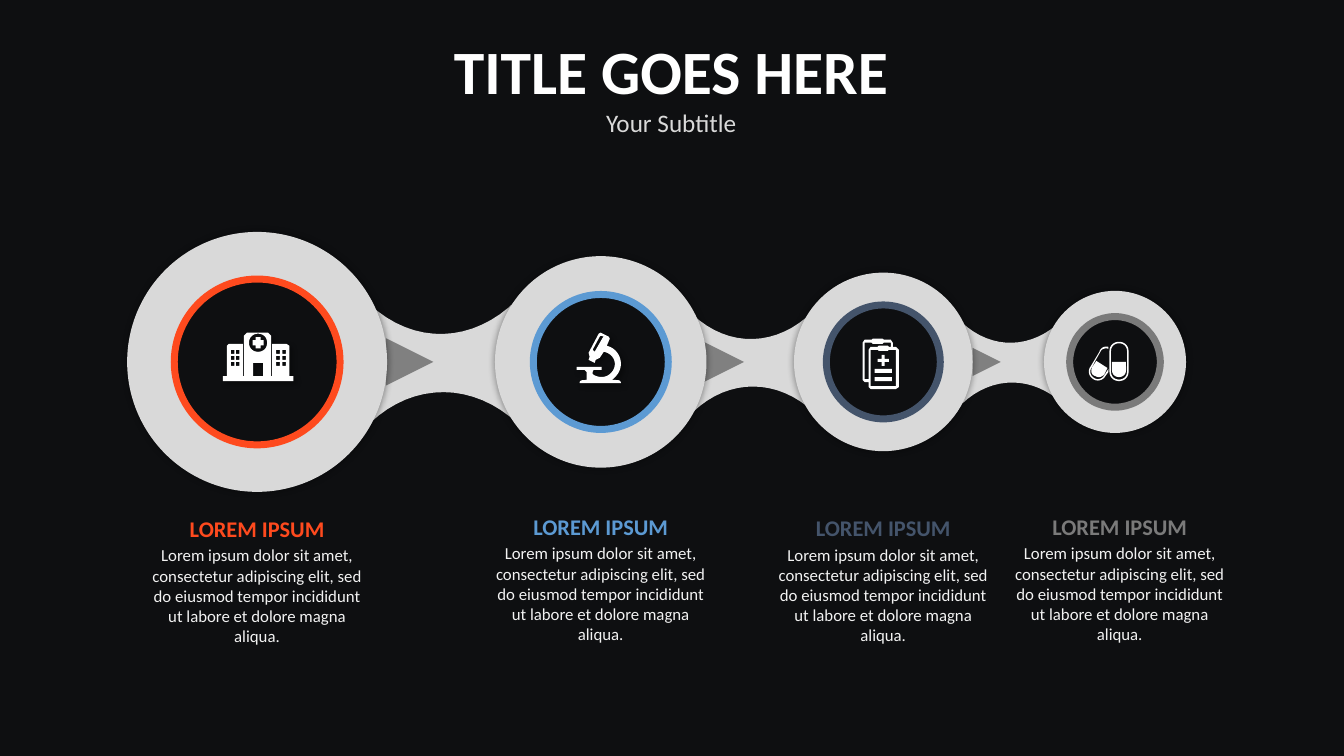
from lxml.etree import SubElement
from pptx import Presentation
from pptx.dml.color import RGBColor
from pptx.enum.shapes import MSO_SHAPE as SHAPE
from pptx.enum.text import MSO_ANCHOR as ANCHOR, MSO_AUTO_SIZE as AUTO, PP_ALIGN as ALIGN
from pptx.oxml.ns import qn
from pptx.util import Cm, Pt

COLORS = {
    "dark": "0E0F11", "disc": "D9D9D9", "arrow": "808080", "white": "FFFFFF",
    "body": "F2F2F2", "orange": "FE4A1E", "blue": "5C9AD3", "navy": "44546B",
    "gray": "7A7A7A",
}
FONT = "Calibri"
BODY = ("Lorem ipsum dolor sit amet, consectetur adipiscing elit, sed do "
        "eiusmod tempor incididunt ut labore et dolore magna aliqua.")
UNIT = Cm(2.54) // 100
RING_RATIO = 0.638
CENTER_Y = 9.12


def rgb(name):
    return RGBColor.from_string(COLORS[name])


def bezier(a, b, c, d, steps=16):
    points = []
    for i in range(steps + 1):
        t = i / steps
        u = 1 - t
        points.append(tuple(u**3 * p + 3 * u * u * t * q + 3 * u * t * t * m + t**3 * n
                            for p, q, m, n in zip(a, b, c, d)))
    return points


def box(x, y, w, h):
    return [(x, y), (x + w, y), (x + w, y + h), (x, y + h)]


def plus(x, y, a, b):
    return [(x - b, y - a), (x + b, y - a), (x + b, y - b), (x + a, y - b),
            (x + a, y + b), (x + b, y + b), (x + b, y + a), (x - b, y + a),
            (x - b, y + b), (x - a, y + b), (x - a, y - b), (x - b, y - b)]


def cap(x, y, r, bulge):
    return bezier((x - r, y), (x - r, y + bulge * 4 / 3), (x + r, y + bulge * 4 / 3), (x + r, y))


def capsule(x, top, bottom, r):
    return cap(x, top + r, r, -r) + cap(x, bottom - r, r, r)[::-1]


def hospital():
    walls = [(0, 43), (4, 43), (4, 13), (6, 11), (20, 11), (20, 43), (21, 43), (21, 3),
             (24, 0), (45, 0), (48, 3), (48, 43), (49, 43), (49, 11), (63, 11), (66, 13),
             (66, 43), (70, 43), (70, 48), (0, 48)]
    windows = [box(x, y, 3.5, 4) for x in (8, 13, 53, 59) for y in (17, 23, 29)]
    sign = capsule(35, 1, 19, 9)
    return [walls, *windows, box(30, 30, 10, 13), sign, plus(35, 10, 5.5, 2.5)]


def microscope():
    body = [(38, 47), *bezier((35, 47), (40, 43), (44, 38), (44, 31)),
            *bezier((44, 31), (44, 22), (38, 15), (30, 13)),
            (33, 6), (32, 4), (24, 0), (22, 1), (12, 20), (13, 24), (12, 27), (18, 30),
            (19, 27), (23, 25), *bezier((27, 19), (33, 20), (38, 25), (38, 31)),
            *bezier((38, 31), (38, 38), (32, 44), (25, 44)),
            *bezier((25, 44), (22, 44), (18, 43), (16, 41)),
            (16, 39), (17, 37), (25, 37), (25, 34), (0, 34), (0, 37), (8, 37), (10, 39),
            *bezier((10, 47), (6, 47), (3, 47), (3, 50)),
            *bezier((44, 50), (44, 47), (41, 47), (38, 47))]
    return [body, [(27, 4), (26, 5), (18, 19), (16, 17), (23, 4), (24, 3)]]


def clipboard():
    edge = [(0, 4), (2, 1), (9, 1), (10, 0), (20, 0), (21, 1), (28, 1), (30, 4), (30, 8),
            (33, 8), (36, 11), (36, 48), (33, 50), (8, 50), (6, 48), (6, 43), (2, 43), (0, 41)]
    back = [(6, 11), (6, 40), (2, 40), (2, 4), (9, 4), (10, 5), (20, 5), (21, 4), (28, 4),
            (28, 8), (26, 8), (25, 7), (16, 7), (15, 8), (8, 8)]
    page = [(33, 47), (8, 47), (8, 11), (15, 11), (16, 12), (25, 12), (26, 11), (33, 11)]
    return [edge, back, page, box(12, 30, 17, 4), box(12, 38, 17, 4), plus(20.5, 21.5, 5.5, 1.5)]


def pills():
    tilted = [(3, 25), *bezier((12, 10), (13, 6), (17, 4), (21, 5)),
              *bezier((21, 7), (18, 6), (14, 7), (13, 10)),
              *bezier((4, 26), (2, 29), (3, 34), (7, 36)),
              *bezier((7, 36), (10, 38), (15, 37), (17, 33)), (21, 27), (21, 30),
              *bezier((18, 34), (16, 38), (10, 40), (6, 37)),
              *bezier((6, 37), (2, 35), (0, 29), (3, 25))]
    tilted_half = [(20, 26), *bezier((17, 32), (15, 35), (11, 36), (8, 34)),
                   *bezier((8, 34), (4, 33), (3, 29), (5, 25)), (9, 19)]
    return [tilted, tilted_half, capsule(31.5, 0, 39, 9.5), capsule(31.5, 1.5, 37.5, 8),
            cap(31.5, 20, 7, 0)[::15] + cap(31.5, 28, 7, 7)[::-1]]


def paint(sp, fill, line=None, blur=0, dist=0, angle=0):
    sp.fill.solid()
    sp.fill.fore_color.rgb = rgb(fill)
    if line:
        sp.line.color.rgb = rgb(line)
        sp.line.width = Pt(5)
    else:
        sp.line.fill.background()
    sp.shadow.inherit = False
    if blur:
        effects = sp._element.spPr.find(qn("a:effectLst"))
        shadow = SubElement(effects, qn("a:outerShdw"), blurRad=str(Pt(blur)),
                            dist=str(Pt(dist)), dir=str(angle * 60000), rotWithShape="0")
        color = SubElement(shadow, qn("a:srgbClr"), val="000000")
        SubElement(color, qn("a:alpha"), val="40000")


def add_outline(s, contours, left, top, sx, sy):
    placed = [[(left + x * sx, top + y * sy) for x, y in c] for c in contours]
    builder = s.shapes.build_freeform(*placed[0][0])
    for i, points in enumerate(placed):
        if i:
            builder.move_to(*points[0])
        builder.add_line_segments(points[1:], close=True)
    return builder.convert_to_shape()


def add_link(s, left, width, arrow_left, arrow_size):
    height = width * 0.83
    neck = (bezier((0, 0.03), (0.3, 0.37), (0.7, 0.35), (0.99, 0))
            + bezier((1, 1), (0.7, 0.66), (0.3, 0.66), (0.01, 0.99)))
    sp = add_outline(s, [neck], Cm(left), Cm(CENTER_Y - height / 2), Cm(width), Cm(height))
    paint(sp, "disc")
    arrow = s.shapes.add_shape(SHAPE.ISOSCELES_TRIANGLE, Cm(arrow_left),
                               Cm(CENTER_Y - arrow_size / 2), Cm(arrow_size), Cm(arrow_size))
    arrow.rotation = 90
    paint(arrow, "arrow")


def add_circle(s, x, size, fill, line=None, blur=0):
    sp = s.shapes.add_shape(SHAPE.OVAL, Cm(x - size / 2), Cm(CENTER_Y - size / 2),
                            Cm(size), Cm(size))
    paint(sp, fill, line, blur)


def add_run(p, text, size, color, bold=False):
    p.alignment = ALIGN.CENTER
    r = p.add_run()
    r.text = text
    r.font.name, r.font.size, r.font.bold = FONT, Pt(size), bold
    r.font.color.rgb = rgb(color)


def add_stage(s, x, size, color, icon, dx, dy, label_x, label_top, blur):
    add_circle(s, x, size, "disc", blur=5)
    add_circle(s, x, size * RING_RATIO, "dark", line=color)
    sp = add_outline(s, icon(), Cm(x) + dx * UNIT, Cm(CENTER_Y) + dy * UNIT, UNIT, UNIT)
    paint(sp, "white", blur=blur, dist=3, angle=45)
    tf = s.shapes.add_textbox(Cm(label_x - 2.92), Cm(label_top), Cm(5.84), Cm(3.61)).text_frame
    tf.word_wrap = True
    add_run(tf.paragraphs[0], "LOREM IPSUM", 16, color, True)
    p = tf.add_paragraph()
    p.space_before = Pt(2.4)
    add_run(p, BODY, 12, "body")


def add_title(s, left, top, width, height):
    sp = s.shapes.title
    sp.left, sp.top, sp.width, sp.height = Cm(left), Cm(top), Cm(width), Cm(height)
    tf = sp.text_frame
    tf.word_wrap = True
    tf.auto_size = AUTO.NONE
    tf.vertical_anchor = ANCHOR.TOP
    add_run(tf.paragraphs[0], "TITLE GOES HERE", 44, "white", True)
    add_run(tf.add_paragraph(), "Your Subtitle", 18, "disc")


def main():
    prs = Presentation()
    prs.slide_width, prs.slide_height = Cm(33.87), Cm(19.05)
    s = prs.slides.add_slide(prs.slide_layouts[5])
    s.background.fill.solid()
    s.background.fill.fore_color.rgb = rgb("dark")
    add_title(s, 9.27, 0.71, 15.29, 3.05)
    for link in ((24.23, 2.57, 24.51, 0.71), (17.45, 3.07, 17.73, 1.02),
                 (9.3, 3.76, 9.73, 1.19)):
        add_link(s, *link)
    for stage in ((6.48, 6.55, "orange", hospital, -34, -29, 6.48, 12.85, 4),
                  (15.14, 5.33, "blue", microscope, -24, -29, 15.14, 12.8, 4),
                  (22.26, 4.5, "navy", clipboard, -20.5, -23, 22.26, 12.83, 0),
                  (28.1, 3.58, "gray", pills, -27.5, -20, 28.22, 12.8, 0)):
        add_stage(s, *stage)
    prs.save("out.pptx")


if __name__ == "__main__":
    main()
